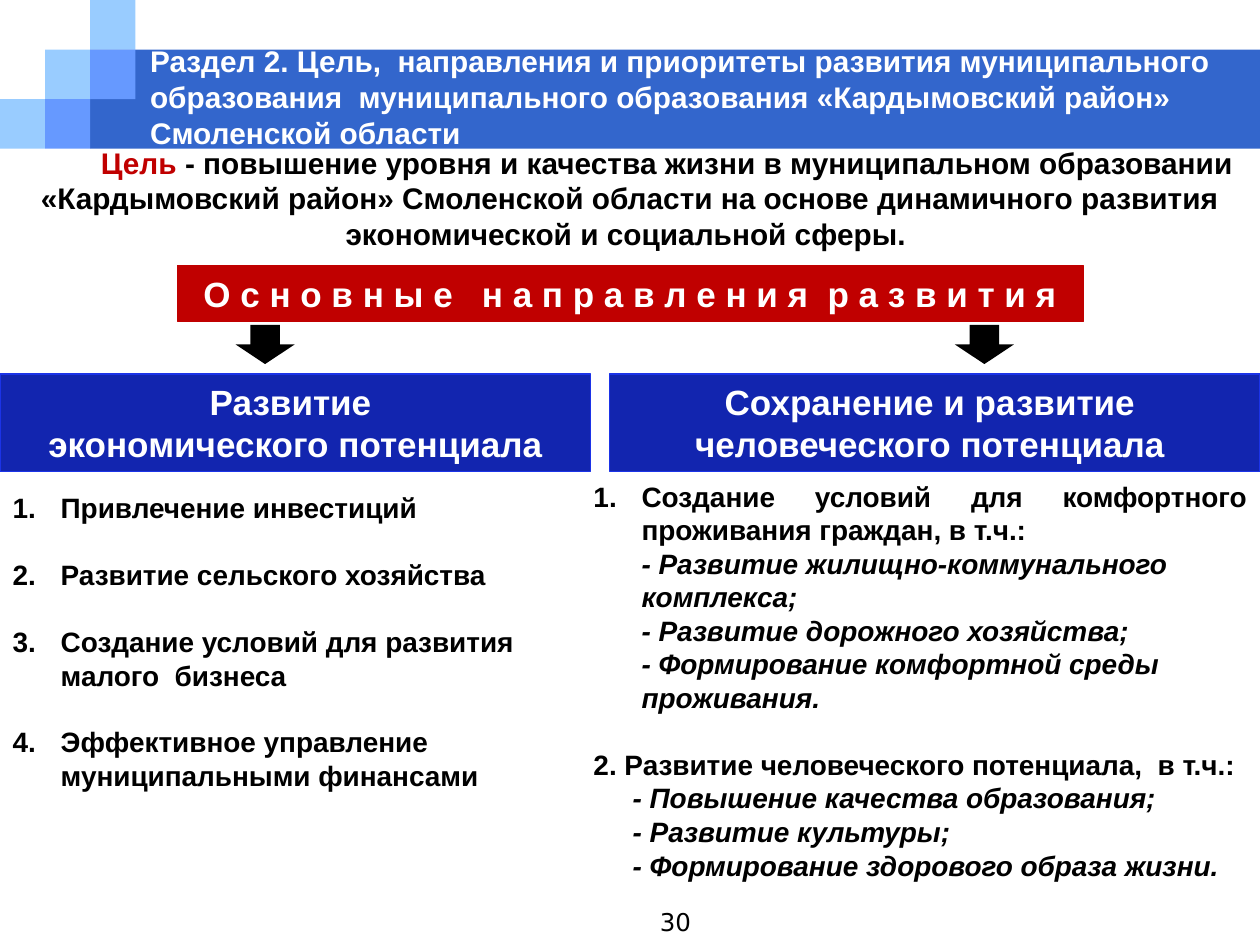
from dataclasses import dataclass

import pptx
import pptx.dml.color
import pptx.enum.shapes
import pptx.enum.text
import pptx.oxml.ns
import pptx.util
from lxml import etree

Cm = pptx.util.Cm
Pt = pptx.util.Pt
RGBColor = pptx.dml.color.RGBColor
Shape = pptx.enum.shapes.MSO_SHAPE
Align = pptx.enum.text.PP_ALIGN
Anchor = pptx.enum.text.MSO_ANCHOR

BANNER_BLUE = RGBColor(0x33, 0x66, 0xCC)
LIGHT_TILE = RGBColor(0x99, 0xCC, 0xFF)
DARK_TILE = RGBColor(0x66, 0x99, 0xFF)
NAVY = RGBColor(0x12, 0x25, 0xAF)
NAVY_EDGE = RGBColor(0x1B, 0x33, 0xE7)
RED = RGBColor(0xC0, 0x00, 0x00)
WHITE = RGBColor(0xFF, 0xFF, 0xFF)
BLACK = RGBColor(0x00, 0x00, 0x00)

TILE_WIDTH, TILE_HEIGHT = 0.91, 1.0
LIST_INDENT = 0.97
BLANK_LINE = 19


@dataclass
class Box:
    """Position and size in centimetres."""
    left: float
    top: float
    width: float
    height: float

    def lengths(self) -> tuple:
        return Cm(self.left), Cm(self.top), Cm(self.width), Cm(self.height)


@dataclass
class Heading:
    box: Box
    lines: list[str]
    fill: RGBColor
    edge: RGBColor


@dataclass
class Item:
    text: str
    numbered: bool = False
    left: float = LIST_INDENT
    italic: bool = False
    justified: bool = False
    gap_after: float = 0


def set_font(paragraph, size: float, color: RGBColor, bold: bool = True,
             name: str = "Arial") -> None:
    font = paragraph.font
    font.name, font.size, font.bold = name, Pt(size), bold
    font.color.rgb = color


def add_block(slide, kind, box: Box, fill: RGBColor, edge: RGBColor | None = None):
    shape = slide.shapes.add_shape(kind, *box.lengths())
    shape.shadow.inherit = False
    shape.fill.solid()
    shape.fill.fore_color.rgb = fill
    if edge is None:
        shape.line.fill.background()
    else:
        shape.line.color.rgb = edge
        shape.line.width = Pt(0.75)
    return shape


def add_heading(slide, heading: Heading) -> None:
    shape = add_block(slide, Shape.RECTANGLE, heading.box, heading.fill, heading.edge)
    frame = shape.text_frame
    frame.vertical_anchor = Anchor.MIDDLE
    frame.text = "\n".join(heading.lines)
    for paragraph in frame.paragraphs:
        paragraph.alignment = Align.CENTER
        set_font(paragraph, 20, WHITE)


def place(placeholder, box: Box, anchor) -> None:
    placeholder.left, placeholder.top, placeholder.width, placeholder.height = box.lengths()
    frame = placeholder.text_frame
    frame.auto_size = pptx.enum.text.MSO_AUTO_SIZE.NONE
    frame.vertical_anchor = anchor
    frame.word_wrap = True


def fill_list(placeholder, items: list[Item]) -> None:
    frame = placeholder.text_frame
    frame.text = "\n".join(item.text for item in items)
    for paragraph, item in zip(frame.paragraphs, items):
        paragraph.alignment = Align.JUSTIFY if item.justified else Align.LEFT
        paragraph.space_before = Pt(0)
        paragraph.space_after = Pt(item.gap_after)
        set_font(paragraph, 16, BLACK)
        paragraph.font.italic = item.italic
        set_numbering(paragraph, item)


def set_numbering(paragraph, item: Item) -> None:
    qn = pptx.oxml.ns.qn
    properties = paragraph.font._element.getparent()
    properties.set("marL", str(Cm(item.left)))
    properties.set("indent", str(-Cm(item.left) if item.numbered else 0))
    bullet = etree.Element(qn("a:buAutoNum" if item.numbered else "a:buNone"))
    if item.numbered:
        bullet.set("type", "arabicPeriod")
    properties.find(qn("a:defRPr")).addprevious(bullet)


def add_banner(slide, title) -> None:
    """Draw the banner and its tiles behind the title."""
    banner = Box(2 * TILE_WIDTH, TILE_HEIGHT, 25.4 - 2 * TILE_WIDTH, 2 * TILE_HEIGHT)
    blocks = [(banner, BANNER_BLUE)]
    for column, row, color in [(0, 2, LIGHT_TILE), (1, 1, LIGHT_TILE), (2, 0, LIGHT_TILE),
                               (2, 1, DARK_TILE), (1, 2, DARK_TILE)]:
        tile = Box(column * TILE_WIDTH, row * TILE_HEIGHT, TILE_WIDTH, TILE_HEIGHT)
        blocks.append((tile, color))
    for box, color in blocks:
        shape = add_block(slide, Shape.RECTANGLE, box, color)
        title.element.addprevious(shape.element)


def add_goal(slide) -> None:
    frame = slide.shapes.add_textbox(*Box(0, 2.77, 25.4, 2.44).lengths()).text_frame
    frame.word_wrap = True
    frame.vertical_anchor = Anchor.MIDDLE
    paragraph = frame.paragraphs[0]
    paragraph.alignment = Align.CENTER
    set_font(paragraph, 17, BLACK)
    paragraph.font._element.getparent().set("indent", str(Cm(1.5)))
    label = paragraph.add_run()
    label.text = "Цель "
    label.font.color.rgb = RED
    paragraph.add_run().text = (
        "- повышение уровня и качества жизни в муниципальном образовании «Кардымовский "
        "район» Смоленской области на основе динамичного развития экономической и "
        "социальной сферы. ")


def add_page_number(slide) -> None:
    frame = slide.shapes.add_textbox(*Box(8.26, 18.16, 5.92, 0.89).lengths()).text_frame
    frame.word_wrap = True
    paragraph = frame.paragraphs[0]
    paragraph.text = "30"
    paragraph.alignment = Align.RIGHT
    set_font(paragraph, 14, BLACK, bold=False, name="DejaVu Sans")


HEADINGS = [
    Heading(Box(3.58, 5.36, 18.26, 1.12),
            ["О с н о в н ы е   н а п р а в л е н и я  р а з в и т и я"], RED, RED),
    Heading(Box(0, 7.54, 11.91, 1.96),
            ["Развитие ", "экономического потенциала"], NAVY, NAVY_EDGE),
    Heading(Box(12.29, 7.54, 13.11, 1.96),
            ["Сохранение и развитие ", "человеческого потенциала "], NAVY, NAVY_EDGE),
]
ECONOMY = [
    Item("Привлечение инвестиций", numbered=True, gap_after=BLANK_LINE),
    Item("Развитие сельского хозяйства", numbered=True, gap_after=BLANK_LINE),
    Item("Создание условий для развития малого  бизнеса", numbered=True,
         gap_after=BLANK_LINE),
    Item("Эффективное управление муниципальными финансами", numbered=True),
]
PEOPLE = [
    Item("Создание условий для комфортного проживания граждан, в т.ч.:",
         numbered=True, justified=True),
    Item("- Развитие жилищно-коммунального комплекса;", italic=True),
    Item("- Развитие дорожного хозяйства;", italic=True),
    Item("- Формирование комфортной среды  проживания.", italic=True,
         gap_after=BLANK_LINE),
    Item("2. Развитие человеческого потенциала,  в т.ч.:", left=0, justified=True),
    Item("- Повышение качества образования;", left=0.79, italic=True),
    Item("- Развитие культуры;", left=0.79, italic=True),
    Item("- Формирование здорового образа жизни.", left=0.79, italic=True),
]


def main() -> None:
    presentation = pptx.Presentation()
    presentation.slide_width, presentation.slide_height = Cm(25.4), Cm(19.05)
    slide = presentation.slides.add_slide(presentation.slide_layouts[3])
    title, economy, people = slide.placeholders
    add_banner(slide, title)
    place(title, Box(2.77, 1.27, 22.63, 1.35), Anchor.MIDDLE)
    heading = title.text_frame.paragraphs[0]
    heading.text = ("Раздел\u00a02.\u00a0Цель,  направления и приоритеты развития муниципального "
                    "образования  муниципального образования «Кардымовский район» "
                    "Смоленской области").replace("\u00a0", " ")
    heading.alignment = Align.LEFT
    set_font(heading, 17, WHITE)
    place(economy, Box(0, 9.73, 12.12, 6.4), Anchor.MIDDLE)
    fill_list(economy, ECONOMY)
    place(people, Box(11.71, 9.53, 13.69, 8.46), Anchor.TOP)
    fill_list(people, PEOPLE)
    add_goal(slide)
    for block in HEADINGS:
        add_heading(slide, block)
    for left in (4.75, 19.25):
        add_block(slide, Shape.DOWN_ARROW, Box(left, 6.55, 1.19, 0.79), BLACK)
    add_page_number(slide)
    presentation.save("out.pptx")


if __name__ == "__main__":
    main()
